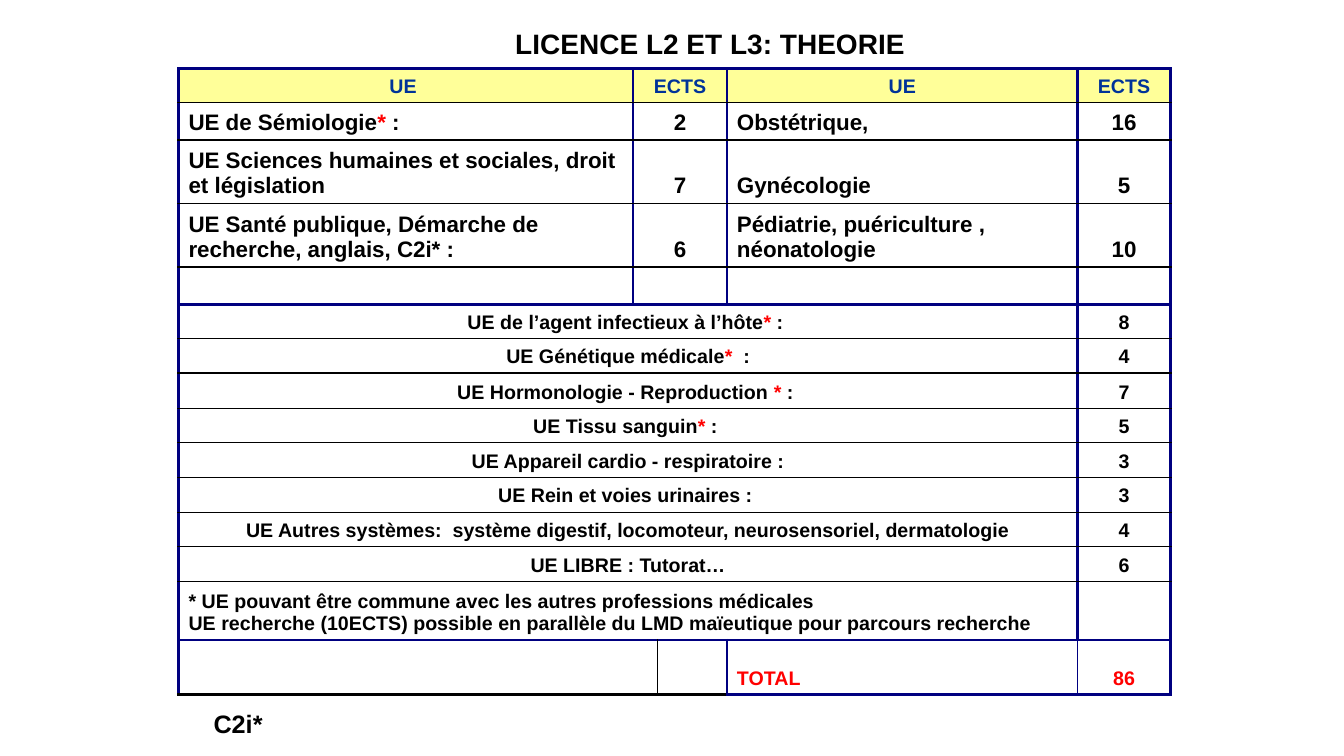
from lxml.etree import SubElement
from pptx import Presentation
from pptx.dml.color import RGBColor
from pptx.enum.text import MSO_ANCHOR, MSO_AUTO_SIZE, PP_ALIGN
from pptx.oxml.ns import qn
from pptx.util import Inches, Pt

INK = {"black": "000000", "red": "FF0000", "blue": "003399",
       "navy": "000080", "yellow": "FFFF99", "white": "FFFFFF"}
WIDE, HIGH = 1333, 750
COLS = (451, 20, 69, 348, 92)
ROWS = (34, 37, 63, 63, 37, 34, 34, 35, 34, 35, 34, 34, 35, 58, 54)
FOUR = ((0, 0), (1, 2), (3, 3), (4, 4))
TWO = ((0, 3), (4, 4))
LAST = ((0, 1), (2, 2), (3, 3), (4, 4))
UNITS = (
    ("UE ", "ECTS", "UE", "ECTS"),
    ("UE de Sémiologie|*| :", "2", "Obstétrique,", "16"),
    ("UE Sciences humaines et sociales, droit et législation", "7", "Gynécologie", "5"),
    ("UE Santé publique, Démarche de recherche, anglais, C2i* :", "6",
     "Pédiatrie, puériculture , néonatologie", "10"),
    ("", "", "", ""),
    ("UE de l’agent infectieux à l’hôte|*| : ", "8"),
    ("UE Génétique médicale|* | :", "4"),
    ("UE Hormonologie - Reproduction |*| : ", "7"),
    ("UE Tissu sanguin|* |: ", "5"),
    ("UE Appareil cardio - respiratoire :", "3"),
    ("UE Rein et voies urinaires : ", "3"),
    ("UE Autres systèmes:  système digestif, locomoteur, neurosensoriel, dermatologie", "4"),
    ("UE LIBRE : Tutorat…", "6"),
    ("* UE pouvant être commune avec les autres professions médicales\n"
     "UE recherche (10ECTS) possible en parallèle du LMD maïeutique pour parcours recherche", ""),
    ("", "", "|TOTAL", "|86"),
)
NAVY, THIN, THICK, FINE = ("navy", 2), ("black", 1), ("black", 2.25), ("navy", 1)
FOOT = {0: {"R": THIN, "B": THICK}, 2: {"L": THIN, "B": THICK},
        3: {"R": FINE}, 4: {"L": FINE}}


class Deck:
    """Hold the style and the current slide, and draw each kind of element."""

    def __init__(self):
        self.show = Presentation()
        self.show.slide_width, self.show.slide_height = Inches(13.33), Inches(7.5)
        self.font = {"name": "Arial", "bold": True}
        self.slide = self.show.slides.add_slide(self.show.slide_layouts[5])

    def place(self, left, top, wide, high):
        across = self.show.slide_width / WIDE
        down = self.show.slide_height / HIGH
        return [round(v) for v in (left * across, top * down, wide * across, high * down)]

    def text(self, frame, words, size, align=PP_ALIGN.LEFT, ink="black"):
        for n, line in enumerate(words.split("\n")):
            para = frame.add_paragraph() if n else frame.paragraphs[0]
            para.alignment = align
            for k, part in enumerate(line.split("|")):
                if part:
                    run = para.add_run()
                    run.text = part
                    for key, val in {**self.font, "size": Pt(size)}.items():
                        setattr(run.font, key, val)
                    run.font.color.rgb = RGBColor.from_string(INK["red" if k % 2 else ink])
            if not line:
                SubElement(para._p, qn("a:endParaRPr"), sz=str(size * 100))

    def title(self, words, spot, size):
        shape = self.slide.shapes.title
        shape.left, shape.top, shape.width, shape.height = self.place(*spot)
        form = {"vertical_anchor": MSO_ANCHOR.TOP, "word_wrap": True,
                "auto_size": MSO_AUTO_SIZE.NONE}
        for key, val in form.items():
            setattr(shape.text_frame, key, val)
        self.text(shape.text_frame, words, size)

    def note(self, words, spot, size):
        frame = self.slide.shapes.add_textbox(*self.place(*spot)).text_frame
        frame.word_wrap = False
        self.text(frame, words, size)

    def edge(self, cell, lines):
        props = cell._tc.get_or_add_tcPr()
        for side in "LRTB":
            if side in lines:
                ink, width = lines[side]
                line = SubElement(props, qn("a:ln" + side), w=str(Pt(width)))
                fill = SubElement(line, qn("a:solidFill"))
                SubElement(fill, qn("a:srgbClr"), val=INK[ink])

    def table(self, left, top):
        spot = self.place(left, top, sum(COLS), sum(ROWS))
        grid = self.slide.shapes.add_table(len(ROWS), len(COLS), *spot).table
        for key in ("first_row", "horz_banding"):
            setattr(grid, key, False)
        for col, wide in zip(grid.columns, COLS):
            col.width = self.place(0, 0, wide, 0)[2]
        for row, high in zip(grid.rows, ROWS):
            row.height = self.place(0, 0, 0, high)[3]
        end = len(ROWS) - 1
        for r, texts in enumerate(UNITS):
            spans = LAST if r == end else FOUR if len(texts) == 4 else TWO
            for (first, last), words in zip(spans, texts):
                self.cell(grid, r, first, last, words, r == end)

    def cell(self, grid, r, first, last, words, foot):
        lines = {"L": NAVY, "R": NAVY,
                 "T": NAVY if r in (0, 5, 14) else THIN,
                 "B": NAVY if r in (4, 13, 14) else THIN}
        if foot:
            lines.update(FOOT[first])
        for c in range(first, last + 1):
            skip = ("L" if c > first else "") + ("R" if c < last else "")
            self.edge(grid.cell(r, c), {s: v for s, v in lines.items() if s not in skip})
        cell = grid.cell(r, first)
        if last > first:
            cell.merge(grid.cell(r, last))
        cell.vertical_anchor = MSO_ANCHOR.BOTTOM
        if foot:
            cell.fill.background()
        else:
            cell.fill.solid()
            cell.fill.fore_color.rgb = RGBColor.from_string(INK["white" if r else "yellow"])
        mid = r == 0 or first in (1, 4) or 5 <= r <= 12
        self.text(cell.text_frame, words, 16 if 1 <= r <= 4 else 14,
                  PP_ALIGN.CENTER if mid else PP_ALIGN.LEFT, "black" if r else "blue")


def main():
    deck = Deck()
    deck.title("LICENCE L2 ET L3: THEORIE", (501, 21, 410, 43), 20)
    deck.table(177, 68)
    deck.note("C2i* ", (202, 698, 76, 40), 18)
    deck.show.save("out.pptx")


if __name__ == "__main__":
    main()
